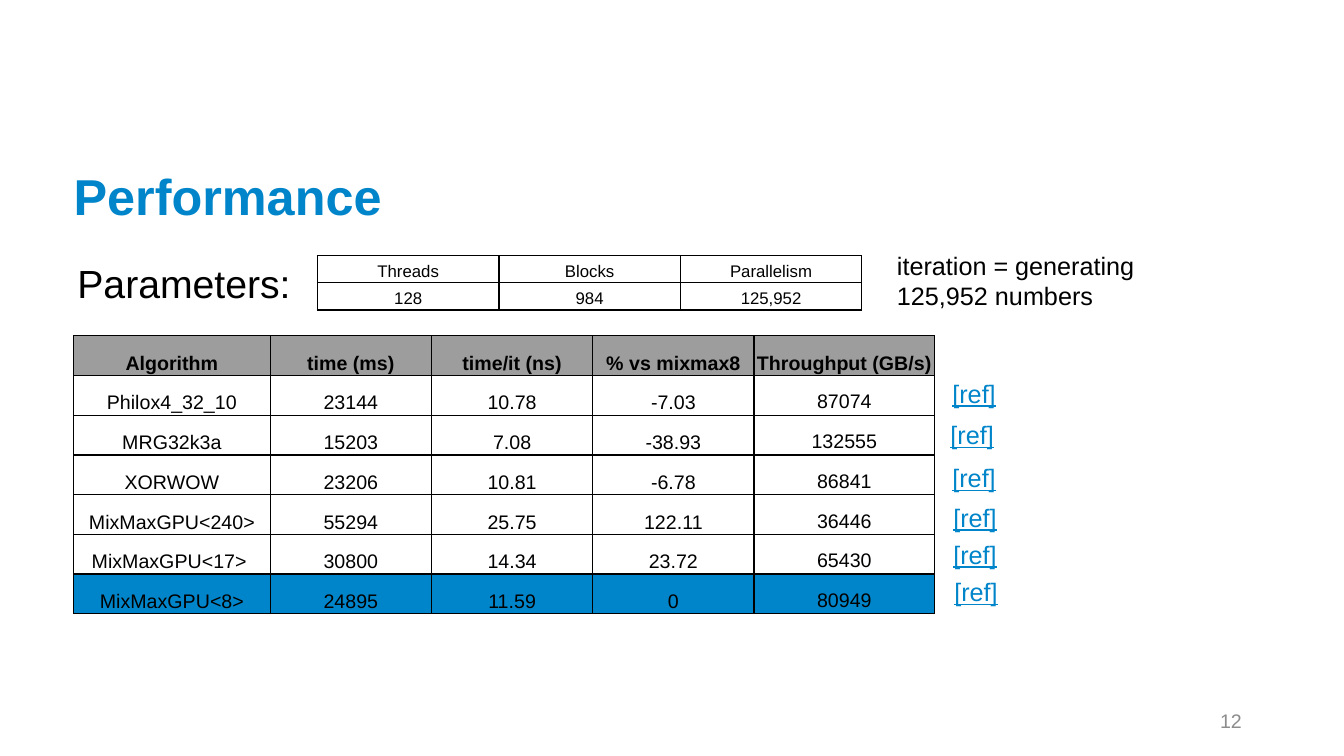
from lxml import etree
from pptx import Presentation
from pptx.dml.color import RGBColor
from pptx.enum import text
from pptx.oxml.ns import qn
from pptx.util import Pt

BLUE, BLACK, GREY, HEADER = "0085CA", "000000", "8C8C8C", "9D9D9D"

PARAMETERS = [
    ("Threads", "Blocks", "Parallelism"),
    ("128", "984", "125,952"),
]
RESULTS = [
    ("Algorithm", "time (ms)", "time/it (ns)", "% vs mixmax8", "Throughput (GB/s)"),
    ("Philox4_32_10", "23144", "10.78", "-7.03", "87074"),
    ("MRG32k3a", "15203", "7.08", "-38.93", "132555"),
    ("XORWOW", "23206", "10.81", "-6.78", "86841"),
    ("MixMaxGPU<240>", "55294", "25.75", "122.11", "36446"),
    ("MixMaxGPU<17> ", "30800", "14.34", "23.72", "65430"),
    ("MixMaxGPU<8>", "24895", "11.59", "0", "80949"),
]
REFERENCES = [(673.2, 266.4), (671.8, 295.9), (673.2, 326.9),
              (673.9, 355), (673.9, 381.6), (674.6, 408.2)]
TEXTS = [
    ("Performance", (52.6, 117.4, 864, 40.3), (0, 3.6, 0, 0),
     dict(size=36, color=BLUE, bold=True), text.MSO_ANCHOR.MIDDLE, text.PP_ALIGN.LEFT),
    ("12", (678.2, 500.4, 216, 28.8), (7.2, 3.6, 7.2, 3.6),
     dict(size=14, color=GREY), text.MSO_ANCHOR.MIDDLE, text.PP_ALIGN.RIGHT),
    ("Parameters:", (48.2, 177.8, 671, 269.3), (7.2, 7.2, 7.2, 7.2),
     dict(size=28, color=BLACK), text.MSO_ANCHOR.TOP, text.PP_ALIGN.LEFT),
    ("iteration = generating 125,952 numbers", (633.6, 171.4, 221.8, 58.3),
     (7.2, 7.2, 7.2, 7.2), dict(size=18, color=BLACK),
     text.MSO_ANCHOR.TOP, text.PP_ALIGN.LEFT),
] + [
    ("[ref]", (left, top, 46.8, 28.8), (7.2, 3.6, 7.2, 3.6),
     dict(size=18, color=BLUE, underline=True), text.MSO_ANCHOR.TOP, text.PP_ALIGN.LEFT)
    for left, top in REFERENCES
]


def rgb(value):
    return RGBColor.from_string(value)


def set_font(paragraph, size, color, bold=False, underline=False):
    font = paragraph.font
    font.name, font.size, font.bold, font.underline = "Arial", Pt(size), bold, underline
    font.color.rgb = rgb(color)


def set_margins(target, margins):
    (target.margin_left, target.margin_top,
     target.margin_right, target.margin_bottom) = [Pt(margin) for margin in margins]


def add_text(slide, content, box, margins, style, anchor, alignment):
    frame = slide.shapes.add_textbox(*[Pt(length) for length in box]).text_frame
    frame.word_wrap = True
    frame.vertical_anchor = anchor
    set_margins(frame, margins)
    paragraph = frame.paragraphs[0]
    paragraph.text = content
    paragraph.alignment = alignment
    set_font(paragraph, **style)


def add_borders(cell):
    properties = cell._tc.get_or_add_tcPr()
    for side in ("a:lnL", "a:lnR", "a:lnT", "a:lnB"):
        line = etree.SubElement(properties, qn(side), w=str(Pt(1)))
        fill = etree.SubElement(line, qn("a:solidFill"))
        etree.SubElement(fill, qn("a:srgbClr"), val=BLACK)


def add_grid(slide, rows, left, top, widths, row_height, size, margins, spacing,
             row_fills={}, bold_rows=()):
    table = slide.shapes.add_table(
        len(rows), len(widths), Pt(left), Pt(top),
        Pt(sum(widths)), Pt(row_height * len(rows))).table
    table.first_row = table.horz_banding = False
    for column, width in zip(table.columns, widths):
        column.width = Pt(width)
    for row_index, values in enumerate(rows):
        table.rows[row_index].height = Pt(row_height)
        for column_index, value in enumerate(values):
            cell = table.cell(row_index, column_index)
            cell.vertical_anchor = text.MSO_ANCHOR.BOTTOM
            set_margins(cell, margins(row_index, column_index))
            add_borders(cell)
            if row_index in row_fills:
                cell.fill.solid()
                cell.fill.fore_color.rgb = rgb(row_fills[row_index])
            else:
                cell.fill.background()
            paragraph = cell.text_frame.paragraphs[0]
            paragraph.text = value
            paragraph.alignment = text.PP_ALIGN.CENTER
            paragraph.line_spacing = spacing
            set_font(paragraph, size, BLACK, bold=row_index in bold_rows)


def parameter_margins(row, column):
    return 2.16, 1.44, 2.16, 1.44


def result_margins(row, column):
    if row and column == 4:
        return parameter_margins(row, column)
    return 0.72, 0.72, 0.72, 0.72


def main():
    presentation = Presentation()
    presentation.slide_width, presentation.slide_height = Pt(960), Pt(540)
    slide = presentation.slides.add_slide(presentation.slide_layouts[6])
    for item in TEXTS:
        add_text(slide, *item)
    add_grid(slide, PARAMETERS, 226.8, 182.6, [129.6] * 3, 18.5, 12,
             parameter_margins, 1.15)
    add_grid(slide, RESULTS, 52.6, 239.8, [140.4, 115.2, 115.2, 115.2, 129], 28.4, 14,
             result_margins, 1.0, {0: HEADER, len(RESULTS) - 1: BLUE}, (0,))
    presentation.save("out.pptx")


if __name__ == "__main__":
    main()
